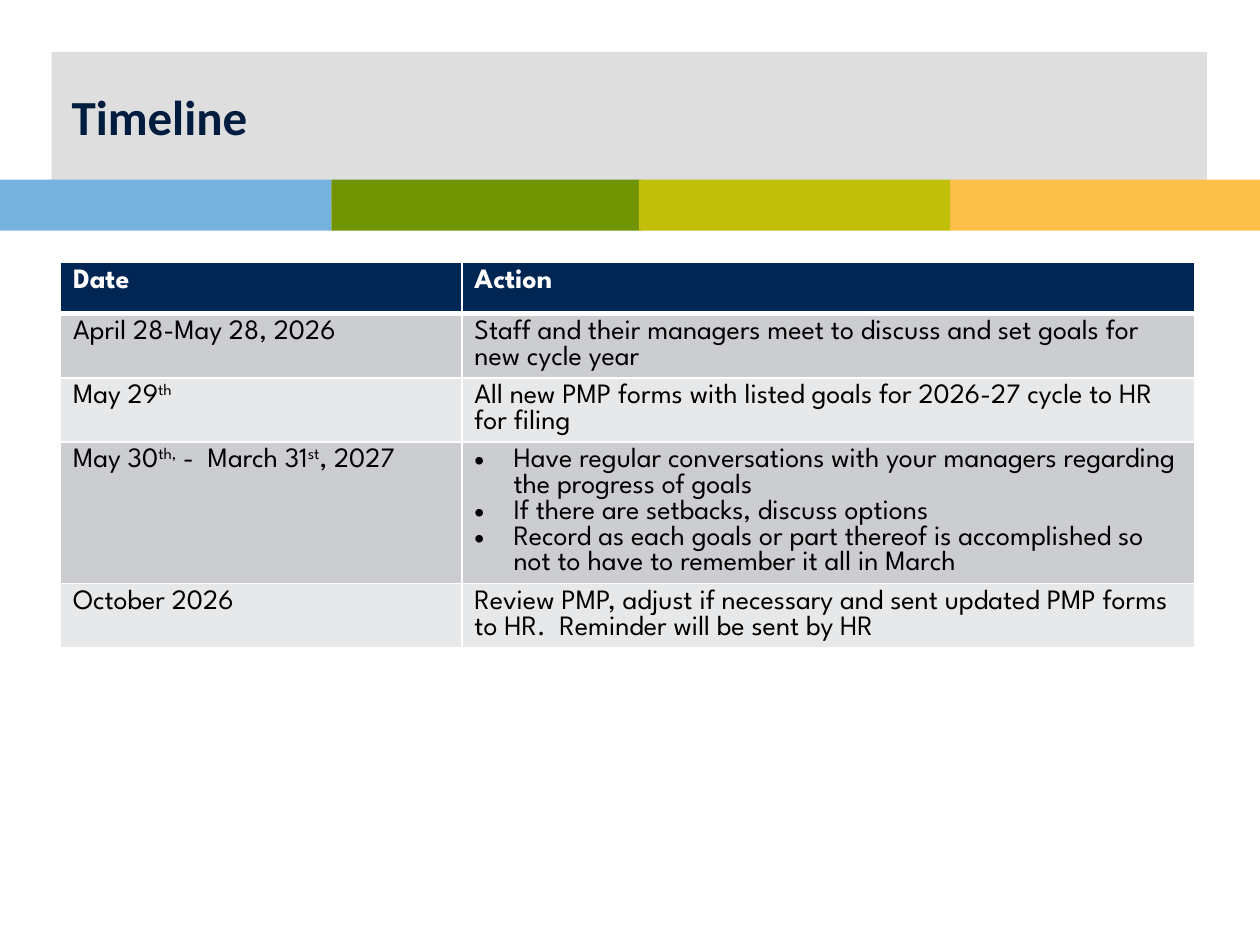
from lxml.etree import SubElement
from pptx import Presentation
from pptx.dml.color import RGBColor
from pptx.enum.shapes import MSO_SHAPE
from pptx.enum.text import MSO_ANCHOR
from pptx.oxml.ns import qn
from pptx.util import Inches, Pt

W, H = 10, 7.5
COLORS = {
    "white": "FFFFFF", "black": "000000", "panel": "DEDEDE", "title": "001C3F",
    "header": "002654", "band_dark": "CCCDD1", "band_light": "E7E8E9",
    "blue": "75B2DD", "green": "709302", "lime": "C1BF0A", "amber": "FCBF49",
}
STRIPES = [("blue", 0, 0.263), ("green", 0.263, 0.246),
           ("lime", 0.507, 0.247), ("amber", 0.754, 0.246)]
ROWS = [
    ("Date", ["Action"]),
    ("April 28-May 28, 2026",
     ["Staff and their managers meet to discuss and set goals for new cycle year"]),
    ("May 29^th",
     ["All new PMP forms with listed goals for 2026-27 cycle to HR for filing"]),
    ("May 30^th,^ -  March 31^st^, 2027",
     ["Have regular conversations with your managers regarding the progress of goals",
      "If there are setbacks, discuss options",
      "Record as each goals or part thereof is accomplished so not to have to "
      "remember it all in March"]),
    ("October 2026",
     ["Review PMP, adjust if necessary and sent updated PMP forms to HR.  "
      "Reminder will be sent by HR"]),
]


def rgb(name):
    return RGBColor.from_string(COLORS[name])


def add_bullet(p):
    pPr = p._p.get_or_add_pPr()
    pPr.set("marL", str(Inches(0.31)))
    pPr.set("indent", str(-Inches(0.31)))
    SubElement(pPr, qn("a:buFont"), typeface="Arial")
    SubElement(pPr, qn("a:buChar"), char="•")


def write(p, text, font="League Spartan", size=16, color="black", bold=False,
          bullet=False, spacing=None):
    if bullet:
        add_bullet(p)
    if spacing:
        p.line_spacing = Pt(spacing)
    for i, part in enumerate(text.split("^")):
        if not part:
            continue
        r = p.add_run()
        r.text = part
        r.font.name, r.font.size, r.font.bold = font, Pt(size), bold
        r.font.color.rgb = rgb(color)
        if i % 2:
            r._r.get_or_add_rPr().set("baseline", "30000")


def add_block(s, box, color, kind=MSO_SHAPE.RECTANGLE):
    sp = s.shapes.add_shape(kind, *map(Inches, box))
    sp.shadow.inherit = False
    sp.fill.solid()
    sp.fill.fore_color.rgb = rgb(color)
    sp.line.fill.background()
    return sp


def add_card(s, box):
    sp = add_block(s, box, "white", MSO_SHAPE.ROUNDED_RECTANGLE)
    sp.adjustments[0] = 0.02


def add_title(s, box):
    x, y, w, h = box
    add_block(s, box, "panel")
    tb = s.shapes.add_textbox(Inches(x + 0.06), Inches(y + 0.02),
                              Inches(w - 0.14), Inches(h * 0.8))
    tf = tb.text_frame
    tf.word_wrap = True
    tf.vertical_anchor = MSO_ANCHOR.MIDDLE
    write(tf.paragraphs[0], "Timeline", font="Calibri", size=28, color="title", bold=True)


def add_stripes(s, box):
    x, y, w, h = box
    for color, start, share in STRIPES:
        add_block(s, (x + start * w, y, share * w, h), color)


def add_borders(cell, bottom):
    tcPr = cell._tc.get_or_add_tcPr()
    for side, width in (("L", 1), ("R", 1), ("T", 1), ("B", bottom)):
        ln = SubElement(tcPr, qn(f"a:ln{side}"), w=str(Pt(width)))
        fill = SubElement(ln, qn("a:solidFill"))
        SubElement(fill, qn("a:srgbClr"), val=COLORS["white"])


def add_timeline(s, box):
    x, y, w, h = box
    table = s.shapes.add_table(len(ROWS), 2, *map(Inches, box)).table
    table.horz_banding = False
    for col, share in zip(table.columns, (0.354, 0.646)):
        col.width = Inches(w * share)
    for i, (date, actions) in enumerate(ROWS):
        table.rows[i].height = Inches(h / len(ROWS))
        head = i == 0
        fill = "header" if head else ("band_light", "band_dark")[i % 2]
        for j, lines in enumerate(([date], actions)):
            cell = table.cell(i, j)
            add_borders(cell, 3 if head else 1)
            cell.fill.solid()
            cell.fill.fore_color.rgb = rgb(fill)
            tf = cell.text_frame
            for k, line in enumerate(lines):
                p = tf.add_paragraph() if k else tf.paragraphs[0]
                write(p, line, color="white" if head else "black", bold=head,
                      bullet=len(lines) > 1, spacing=14.7)


def main():
    prs = Presentation()
    prs.slide_width, prs.slide_height = Inches(W), Inches(H)
    s = prs.slides.add_slide(prs.slide_layouts[6])
    add_card(s, (0.01 * W, 0.015 * H, 0.98 * W, 0.972 * H))
    add_title(s, (0.041 * W, 0.055 * H, 0.917 * W, 0.163 * H))
    add_stripes(s, (0, 0.19 * H, W, 0.054 * H))
    add_timeline(s, (0.048 * W, 0.278 * H, 0.9 * W, 0.27 * H))
    prs.save("out.pptx")


if __name__ == "__main__":
    main()
